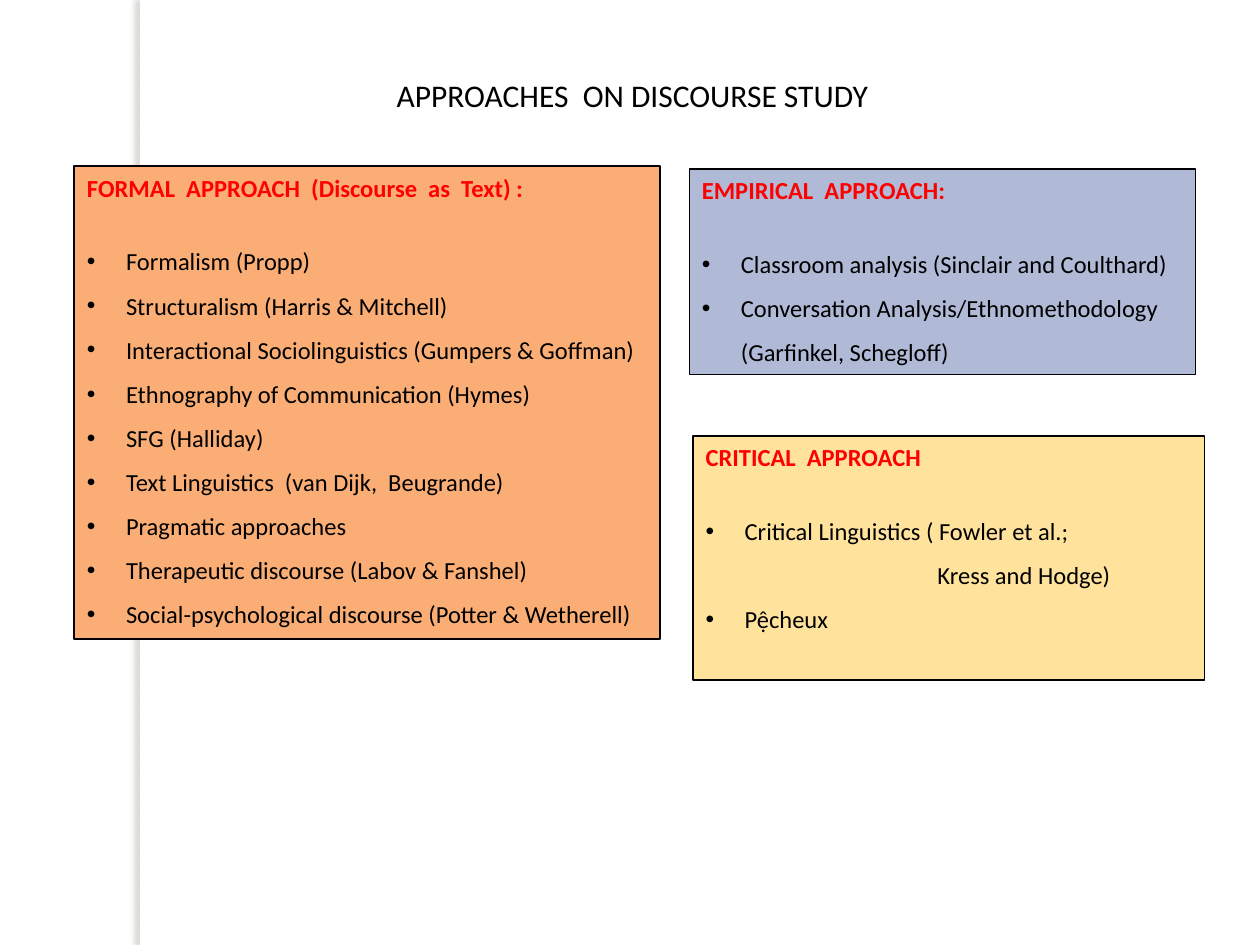
import pptx
import pptx.dml.color
import pptx.enum.shapes
import pptx.enum.text
import pptx.oxml
import pptx.oxml.ns
import pptx.util
from lxml import etree

Inches = pptx.util.Inches
Pt = pptx.util.Pt
RGB = pptx.dml.color.RGBColor
TEXT = pptx.enum.text

BLACK = RGB(0x00, 0x00, 0x00)
WHITE = RGB(0xFF, 0xFF, 0xFF)
RED = RGB(0xFF, 0x00, 0x00)
ORANGE = RGB(0xFA, 0xAE, 0x76)
BLUE = RGB(0xB0, 0xBA, 0xD7)
YELLOW = RGB(0xFF, 0xE3, 0x9D)

SHADOW = (
    '<a:effectLst %s><a:outerShdw blurRad="38100" dist="38100" dir="10800000"'
    ' algn="tl" rotWithShape="0"><a:srgbClr val="736F63"><a:alpha val="25000"/>'
    '</a:srgbClr></a:outerShdw></a:effectLst>' % pptx.oxml.ns.nsdecls("a"))


class Deck:
    font = "Calibri"
    size = 14
    hang = 0.31   # bullet indent
    gap = 17      # space below a heading, one line

    def __init__(self, slide):
        self.slide = slide

    def place(self, shape, box):
        shape.left, shape.top, shape.width, shape.height = map(Inches, box)

    def words(self, par, text, size, color, bold=False):
        run = par.add_run()
        run.text = text
        run.font.name = self.font
        run.font.size = Pt(size)
        run.font.bold = bold
        run.font.color.rgb = color

    def layout(self, par, left=0, mark=None, align=TEXT.PP_ALIGN.LEFT):
        par.alignment = align
        par.space_before = par.space_after = Pt(0)
        props = par._p.get_or_add_pPr()
        props.set("marL", str(Inches(left)))
        props.set("indent", str(-Inches(left) if mark else 0))
        tag = pptx.oxml.ns.qn("a:buChar" if mark else "a:buNone")
        bullet = etree.SubElement(props, tag)
        if mark:
            bullet.set("char", mark)

    def strip(self, box):
        bar = self.slide.shapes.add_shape(
            pptx.enum.shapes.MSO_SHAPE.RECTANGLE, *map(Inches, box))
        bar.fill.solid()
        bar.fill.fore_color.rgb = WHITE
        bar.line.fill.background()
        bar._element.spPr.append(pptx.oxml.parse_xml(SHADOW))
        self.slide.shapes._spTree.insert(2, bar._element)

    def title(self, text, box):
        shape = self.slide.shapes.title
        self.place(shape, box)
        frame = shape.text_frame
        frame.word_wrap = False
        frame.auto_size = TEXT.MSO_AUTO_SIZE.NONE
        frame.vertical_anchor = TEXT.MSO_ANCHOR.MIDDLE
        self.layout(frame.paragraphs[0], align=TEXT.PP_ALIGN.CENTER)
        self.words(frame.paragraphs[0], text, 18, BLACK)

    def panel(self, shape, box, fill, width, head, items):
        self.place(shape, box)
        shape.fill.solid()
        shape.fill.fore_color.rgb = fill
        shape.line.color.rgb = BLACK
        shape.line.width = Pt(width)
        frame = shape.text_frame
        frame.word_wrap = True
        frame.auto_size = TEXT.MSO_AUTO_SIZE.NONE
        frame.vertical_anchor = TEXT.MSO_ANCHOR.TOP
        par = frame.paragraphs[0]
        self.layout(par)
        par.space_after = Pt(self.gap)
        self.words(par, head, self.size, RED, True)
        for item in items:
            # A pair is an unmarked line with its own indent
            text, left, mark = (
                (*item, None) if isinstance(item, tuple)
                else (item, self.hang, "•"))
            par = frame.add_paragraph()
            self.layout(par, left, mark)
            par.line_spacing = 1.5
            self.words(par, text, self.size, BLACK)


PANELS = [
    ((0.59, 1.32, 4.65, 3.75), ORANGE, 1,
     "FORMAL  APPROACH  (Discourse  as  Text) :",
     ["Formalism (Propp)",
      "Structuralism (Harris & Mitchell)",
      "Interactional Sociolinguistics (Gumpers & Goffman)",
      "Ethnography of Communication (Hymes)",
      "SFG (Halliday)",
      "Text Linguistics  (van Dijk,  Beugrande)",
      "Pragmatic approaches",
      "Therapeutic discourse (Labov & Fanshel)",
      "Social-psychological discourse (Potter & Wetherell)"]),
    ((5.47, 1.34, 4.02, 1.63), BLUE, 0.75,
     "EMPIRICAL  APPROACH:",
     ["Classroom analysis (Sinclair and Coulthard)",
      "Conversation Analysis/Ethnomethodology (Garfinkel, Schegloff)"]),
    ((5.5, 3.46, 4.06, 1.94), YELLOW, 1,
     "CRITICAL  APPROACH",
     ["Critical Linguistics ( Fowler et al.;",
      ("Kress and Hodge)", 1.84),
      "Pệcheux"]),
]


def main():
    prs = pptx.Presentation()
    prs.slide_width, prs.slide_height = Inches(10), Inches(7.5)
    # The comparison layout has a title and four bodies
    slide = prs.slides.add_slide(prs.slide_layouts[4])
    deck = Deck(slide)

    # Side strip and title
    deck.strip((1.11, 0, 0.08, 7.5))
    deck.title("APPROACHES  ON DISCOURSE STUDY", (3.03, 0.55, 3.98, 0.4))

    # The three approaches, then drop the unused body
    first, second, third, spare = list(slide.placeholders)[1:]
    for shape, panel in zip((first, second, third), PANELS):
        deck.panel(shape, *panel)
    spare._element.getparent().remove(spare._element)

    prs.save("out.pptx")


if __name__ == "__main__":
    main()
